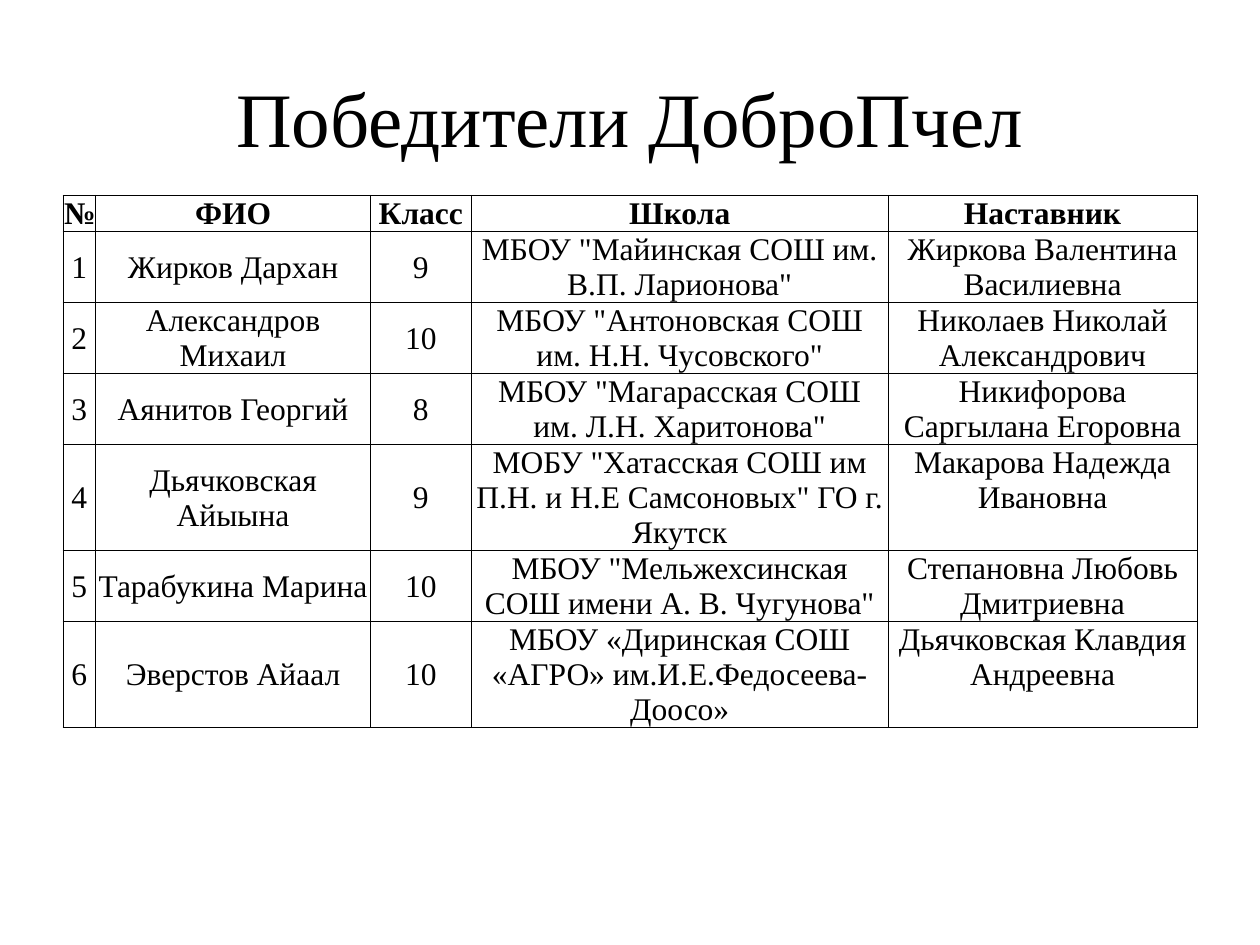
"""Build the slide that lists the contest winners in a table."""
from lxml import etree
from pptx import Presentation
from pptx import util as u
from pptx.dml.color import RGBColor
from pptx.enum import text
from pptx.oxml.ns import qn

COLORS = {"ink": "000000", "paper": "FFFFFF"}
HEADER = ["№", "ФИО", "Класс", "Школа", "Наставник"]
WINNERS = [
    ["Жирков Дархан", "9", 'МБОУ "Майинская СОШ им. В.П. Ларионова"',
     "Жиркова Валентина Василиевна"],
    ["Александров Михаил", "10", 'МБОУ "Антоновская СОШ им. Н.Н. Чусовского"',
     "Николаев Николай Александрович"],
    ["Аянитов Георгий", "8", 'МБОУ "Магарасская СОШ им. Л.Н. Харитонова"',
     "Никифорова Саргылана Егоровна"],
    ["Дьячковская Айыына", "9",
     'МОБУ "Хатасская СОШ им П.Н. и Н.Е Самсоновых" ГО г. Якутск',
     "Макарова Надежда Ивановна"],
    ["Тарабукина Марина", "10", 'МБОУ "Мельжехсинская СОШ имени А. В. Чугунова"',
     "Степановна Любовь Дмитриевна"],
    ["Эверстов Айаал", "10", "МБОУ «Диринская СОШ «АГРО» им.И.Е.Федосеева-Доосо»",
     "Дьячковская Клавдия Андреевна"],
]
COL_WIDTHS = [0.26, 2.18, 0.8, 3.31, 2.45]
ROW_HEIGHTS = [0.22, 0.44, 0.42, 0.44, 0.42, 0.42, 0.42]
TOP_SCHOOL_ROWS = {2, 4, 5, 6}


class Deck:
    """Hold the text style and the current slide."""

    font = "Times New Roman"

    def __init__(self, prs):
        """Add a title-only slide to the presentation."""
        self.slide = prs.slides.add_slide(prs.slide_layouts[5])

    def set_text(self, tf, words, size, bold=False):
        """Fill a text frame with one centred paragraph."""
        p = tf.paragraphs[0]
        p.text = words
        p.alignment = text.PP_ALIGN.CENTER
        for r in p.runs:
            r.font.name = self.font
            r.font.size = u.Pt(size)
            r.font.bold = bold
            r.font.color.rgb = RGBColor.from_string(COLORS["ink"])

    def title(self, words, left, top, width, height):
        """Place and format the title placeholder."""
        sp = self.slide.shapes.title
        sp.left, sp.top = u.Inches(left), u.Inches(top)
        sp.width, sp.height = u.Inches(width), u.Inches(height)
        sp.text_frame.vertical_anchor = text.MSO_ANCHOR.MIDDLE
        self.set_text(sp.text_frame, words, 44)

    def borders(self, cell, width=0.5):
        """Draw a thin line on every side of a cell."""
        tcPr = cell._tc.get_or_add_tcPr()
        for side in ("lnL", "lnR", "lnT", "lnB"):
            ln = etree.SubElement(tcPr, qn(f"a:{side}"), w=str(u.Pt(width)))
            fill = etree.SubElement(ln, qn("a:solidFill"))
            etree.SubElement(fill, qn("a:srgbClr"), val=COLORS["ink"])

    def cell(self, cell, words, bold, anchor):
        """Fill and format one table cell."""
        cell.margin_left = cell.margin_right = cell.margin_top = u.Inches(0.01)
        cell.margin_bottom = 0
        cell.vertical_anchor = anchor
        self.borders(cell)
        cell.fill.solid()
        cell.fill.fore_color.rgb = RGBColor.from_string(COLORS["paper"])
        self.set_text(cell.text_frame, words, 18, bold)

    def table(self, rows, left, top, width, height):
        """Add the bordered table of winners."""
        frame = self.slide.shapes.add_table(
            len(rows), len(rows[0]), u.Inches(left), u.Inches(top),
            u.Inches(width), u.Inches(height))
        tbl = frame.table
        tbl.horz_banding = False
        for col, size in zip(tbl.columns, COL_WIDTHS):
            col.width = u.Inches(size)
        for row, size in zip(tbl.rows, ROW_HEIGHTS):
            row.height = u.Inches(size)
        frame.height = u.Inches(height)
        for i, row in enumerate(rows):
            for j, words in enumerate(row):
                at_top = (j == 4 and i > 0) or (j == 3 and i in TOP_SCHOOL_ROWS)
                anchor = text.MSO_ANCHOR.TOP if at_top else text.MSO_ANCHOR.MIDDLE
                self.cell(tbl.cell(i, j), words, i == 0, anchor)


def main():
    """Create and save the presentation."""
    prs = Presentation()
    prs.slide_width, prs.slide_height = u.Inches(10), u.Inches(7.5)
    deck = Deck(prs)
    deck.title("Победители ДоброПчел", 0.5, 0.3, 9, 1.25)
    rows = [HEADER] + [[str(n), *winner] for n, winner in enumerate(WINNERS, 1)]
    deck.table(rows, 0.5, 1.55, 9, 4.57)
    prs.save("out.pptx")


if __name__ == "__main__":
    main()
